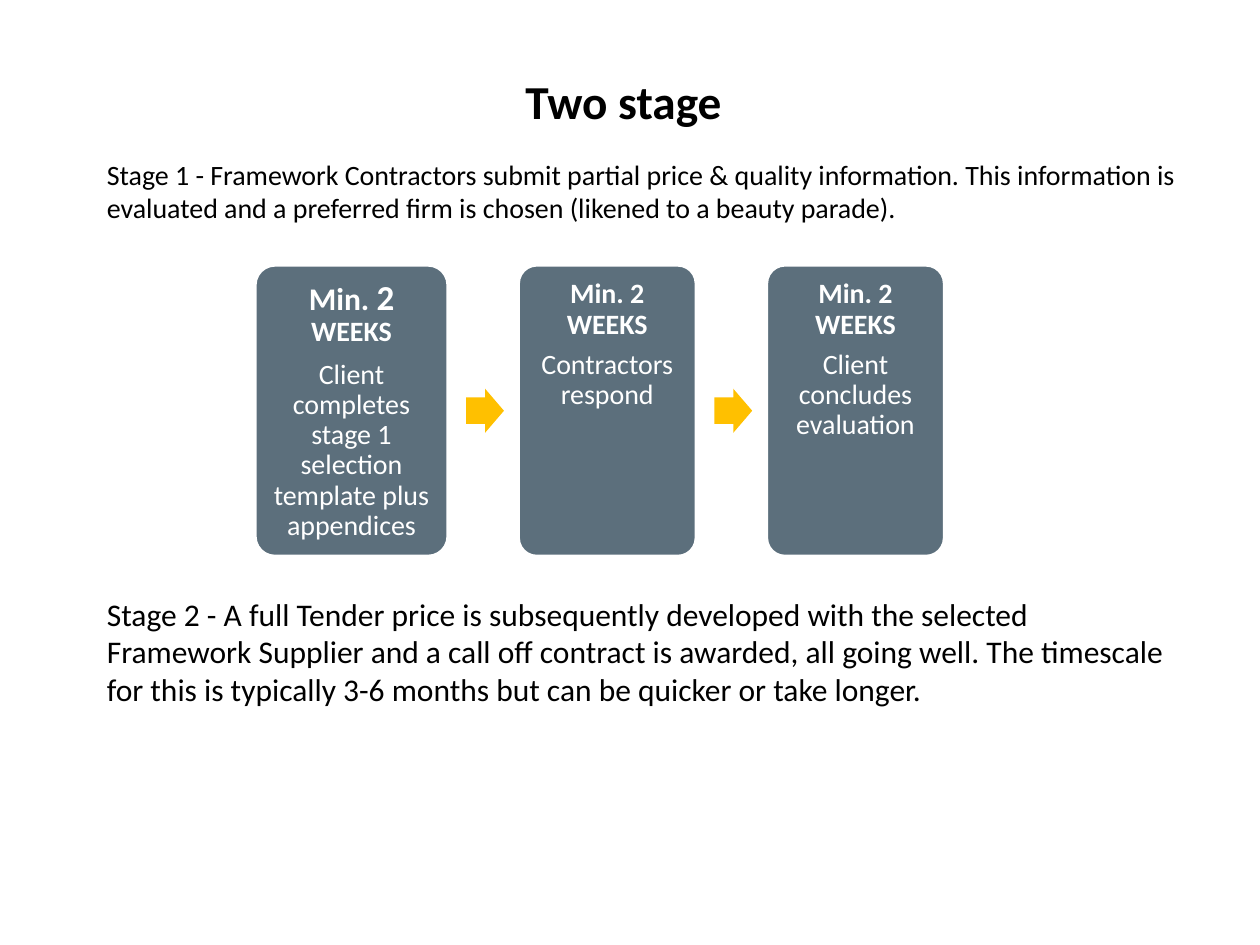
from dataclasses import dataclass

from pptx import Presentation, util as u
from pptx.dml.color import RGBColor
from pptx.enum import shapes as sh, text as tx

HUES = {"ink": "000000", "paper": "FFFFFF", "slate": "5C6F7C", "gold": "FFC000"}
COLS, ROWS = 100, 75
LEFT, TOP, TALL, GAP = 20.3, 21.1, 23, 5.7
LEAD, WIDE, HIGH = 1.5, 3, 3.5
MID, HEAD = tx.MSO_ANCHOR.MIDDLE, tx.MSO_ANCHOR.TOP


@dataclass
class Run:
    text: str
    size: float
    bold: bool = False


@dataclass
class Note:
    area: tuple[float, float, float, float]
    run: Run
    anchor: tx.MSO_ANCHOR = HEAD
    align: tx.PP_ALIGN = tx.PP_ALIGN.LEFT


@dataclass
class Step:
    width: float
    head: list[Run]
    task: str
    after: float = 5.6
    anchor: tx.MSO_ANCHOR = HEAD


SPAN = [Run("Min. 2 WEEKS", 16, True)]
STEPS = [
    Step(15.2, [Run("Min. ", 18, True), Run("2 ", 20, True), Run("WEEKS", 16, True)],
         "Client completes stage 1 selection template plus appendices", 7, MID),
    Step(14, SPAN, "Contractors respond"),
    Step(14, SPAN, "Client concludes evaluation"),
]
NOTES = [
    Note((12.4, 4, 75, 8), Run("Two stage ", 27, True), MID, tx.PP_ALIGN.CENTER),
    Note((7.5, 12, 87, 6.5), Run(
        "Stage 1 - Framework Contractors submit partial price & quality information. "
        "This information is evaluated and a preferred firm is chosen "
        "(likened to a beauty parade).", 16)),
    Note((7.5, 46.7, 87, 10.3), Run(
        "Stage 2 - A full Tender price is subsequently developed with the selected "
        "Framework Supplier and a call off contract is awarded, all going well. "
        "The timescale for this is typically 3-6 months but can be quicker or take longer.",
        18)),
]

deck = Presentation()
deck.slide_width, deck.slide_height = u.Inches(10), u.Inches(7.5)
slide = deck.slides.add_slide(deck.slide_layouts[6])


def style(item, **marks) -> None:
    for key, val in marks.items():
        setattr(item, key, val)


def place(x: float, y: float, w: float, h: float) -> list[int]:
    wide, tall = deck.slide_width / COLS, deck.slide_height / ROWS
    return [int(n) for n in (x * wide, y * tall, w * wide, h * tall)]


def write(para, runs: list[Run], hue: str, **marks) -> None:
    style(para, **marks)
    for part in runs:
        run = para.add_run()
        run.text = part.text
        style(run.font, name="Calibri", size=u.Pt(part.size), bold=part.bold)
        run.font.color.rgb = RGBColor.from_string(HUES[hue])


def block(kind: sh.MSO_SHAPE, area: tuple, hue: str, *bends: float):
    form = slide.shapes.add_shape(kind, *place(*area))
    form.shadow.inherit = False
    form.fill.solid()
    form.fill.fore_color.rgb = RGBColor.from_string(HUES[hue])
    for i, bend in enumerate(bends):
        form.adjustments[i] = bend
    return form


def draw_note(note: Note) -> None:
    frame = slide.shapes.add_textbox(*place(*note.area)).text_frame
    style(frame, word_wrap=True, vertical_anchor=note.anchor)
    write(frame.paragraphs[0], [note.run], "ink", alignment=note.align)


def draw_step(step: Step, x: float) -> None:
    card = block(sh.MSO_SHAPE.ROUNDED_RECTANGLE, (x, TOP, step.width, TALL), "slate", 0.1)
    card.line.color.rgb = RGBColor.from_string(HUES["paper"])
    card.line.width = u.Pt(1)
    frame = card.text_frame
    pad = u.Inches(0.07)
    style(frame, word_wrap=True, vertical_anchor=step.anchor, margin_left=pad,
          margin_right=pad, margin_top=pad, margin_bottom=pad)
    look = dict(alignment=tx.PP_ALIGN.CENTER, line_spacing=0.9, space_after=u.Pt(step.after))
    write(frame.paragraphs[0], step.head, "paper", **look)
    write(frame.add_paragraph(), [Run(step.task, 16)], "paper", **look)


def draw_arrow(x: float) -> None:
    area = (x, TOP + (TALL - HIGH) / 2, WIDE, HIGH)
    block(sh.MSO_SHAPE.RIGHT_ARROW, area, "gold", 0.6, 0.5).line.fill.background()


def main() -> None:
    for note in NOTES:
        draw_note(note)
    x = LEFT
    for i, step in enumerate(STEPS):
        if i:
            draw_arrow(x - GAP + LEAD)
        draw_step(step, x)
        x += step.width + GAP
    deck.save("out.pptx")


if __name__ == "__main__":
    main()
